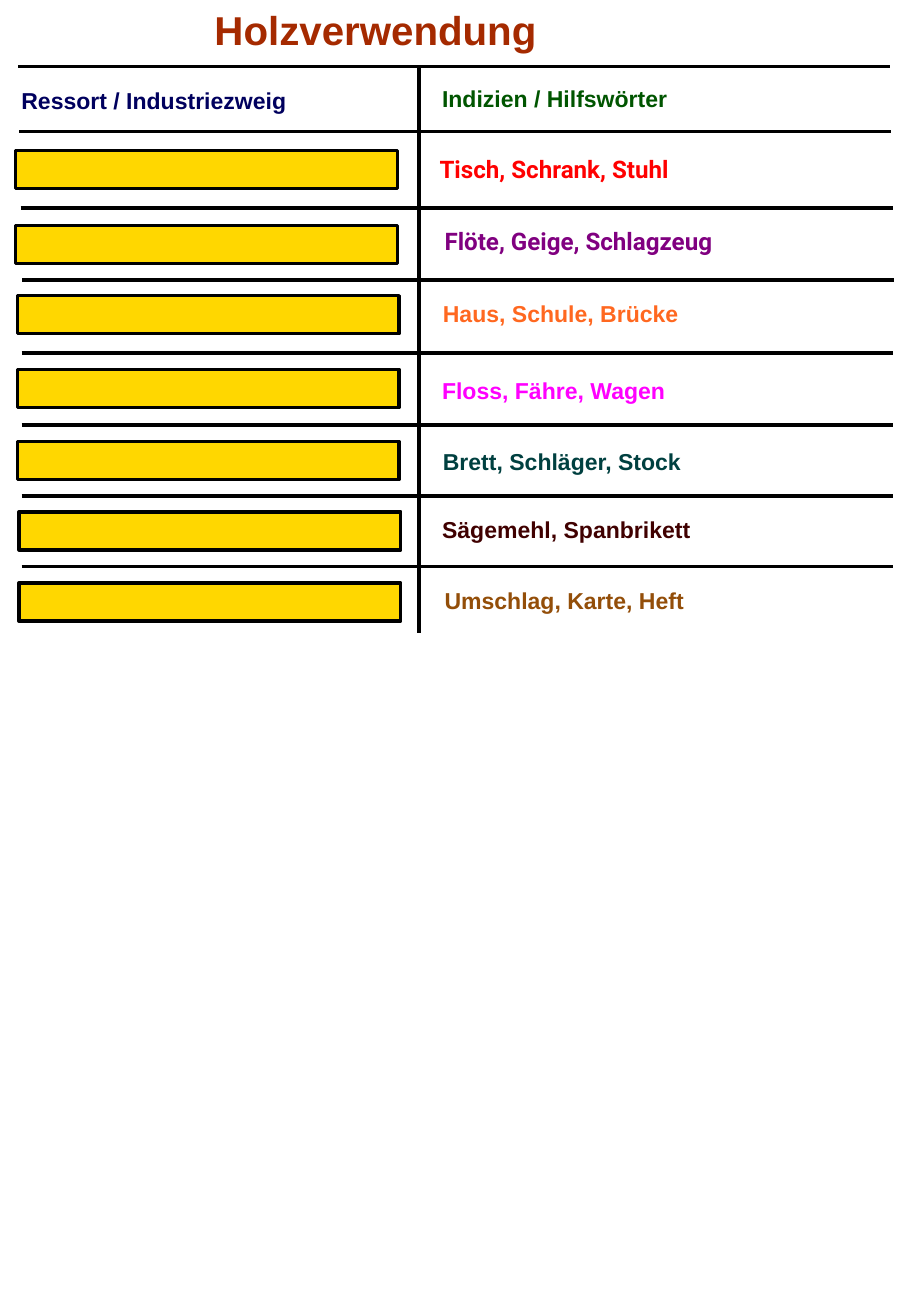
import dataclasses

import lxml.etree
import pptx
import pptx.dml.color
import pptx.enum.shapes
import pptx.enum.text
import pptx.oxml.ns
import pptx.util

WIDTH, HEIGHT = 11.11, 15.89
GRID_TOP, ROW_HEIGHT = 1.63, 0.87
HEADER_TOP, GRID_BOTTOM = 0.8, 7.64
RULE_LENGTH, DIVIDER_LEFT = 10.53, 5.06
SLOT_WIDTH, SLOT_HEIGHT = 4.61, 0.46
HINT_WIDTH, TEXT_HEIGHT = 5.1, 0.44

COLOURS = {
    "rust": "A52A00", "navy": "00005E", "green": "005500",
    "black": "000000", "gold": "FFD700", "red": "FF0000",
    "purple": "800080", "orange": "FF6820", "magenta": "FF00FF",
    "teal": "004040", "maroon": "400000", "brown": "934E09",
}


@dataclasses.dataclass
class Row:
    hint: str
    colour: str
    rule_left: float
    rule_drop: float
    slot_left: float
    slot_drop: float
    hint_left: float
    hint_drop: float
    font: str = "Arial"
    size: int = 20


ROWS = [
    Row("Tisch, Schrank, Stuhl", "red", 0.23, -0.04, 0.19, 0.19, 5.21, 0.19, "Roboto", 21),
    Row("Flöte, Geige, Schlagzeug", "purple", 0.25, 0.01, 0.19, 0.22, 5.27, 0.18, "Roboto", 21),
    Row("Haus, Schule, Brücke", "orange", 0.27, 0.01, 0.21, 0.2, 5.25, 0.2),
    Row("Floss, Fähre, Wagen", "magenta", 0.26, 0.02, 0.21, 0.22, 5.24, 0.26),
    Row("Brett, Schläger, Stock", "teal", 0.26, 0.02, 0.21, 0.22, 5.25, 0.24),
    Row("Sägemehl, Spanbrikett", "maroon", 0.26, 0.01, 0.23, 0.2, 5.24, 0.2),
    Row("Umschlag, Karte, Heft", "brown", 0.26, -0.01, 0.23, 0.19, 5.27, 0.18),
]


def inches(*lengths):
    return [pptx.util.Inches(length) for length in lengths]


def rgb(name):
    return pptx.dml.color.RGBColor.from_string(COLOURS[name])


def format_text(box, text, colour, font="Arial", size=20):
    frame = box.text_frame
    frame.text = text
    frame.word_wrap = True
    frame.auto_size = pptx.enum.text.MSO_AUTO_SIZE.NONE
    frame.vertical_anchor = pptx.enum.text.MSO_ANCHOR.TOP
    para = frame.paragraphs[0]
    para.alignment = pptx.enum.text.PP_ALIGN.LEFT
    span = para.runs[0]
    span.font.name = font
    span.font.size = pptx.util.Pt(size)
    span.font.bold = True
    span.font.color.rgb = rgb(colour)


def add_title(page):
    title = page.shapes.title
    title.left, title.top, title.width, title.height = inches(2.49, 0.01, 5.63, 0.69)
    format_text(title, "Holzverwendung", "rust", size=35)


def add_label(page, left, top, text, colour, font="Arial", size=20):
    box = page.shapes.add_textbox(*inches(left, top, HINT_WIDTH, TEXT_HEIGHT))
    format_text(box, text, colour, font, size)


def format_line(line):
    line.color.rgb = rgb("black")
    line.width = pptx.util.Pt(3)


def add_line(page, left, top, right, bottom):
    line = page.shapes.add_connector(
        pptx.enum.shapes.MSO_CONNECTOR.STRAIGHT, *inches(left, top, right, bottom))
    format_line(line.line)
    lxml.etree.SubElement(line._element.spPr, pptx.oxml.ns.qn("a:effectLst"))


def add_rule(page, left, top):
    add_line(page, left, top, left + RULE_LENGTH, top)


def add_slot(page, left, top):
    slot = page.shapes.add_shape(
        pptx.enum.shapes.MSO_SHAPE.RECTANGLE, *inches(left, top, SLOT_WIDTH, SLOT_HEIGHT))
    slot.shadow.inherit = False
    slot.fill.solid()
    slot.fill.fore_color.rgb = rgb("gold")
    format_line(slot.line)


def add_row(page, row, top):
    add_rule(page, row.rule_left, top + row.rule_drop)
    add_slot(page, row.slot_left, top + row.slot_drop)
    add_label(page, row.hint_left, top + row.hint_drop,
              row.hint, row.colour, row.font, row.size)


def main():
    deck = pptx.Presentation()
    deck.slide_width, deck.slide_height = inches(WIDTH, HEIGHT)
    page = deck.slides.add_slide(deck.slide_layouts.get_by_name("Title Only"))
    add_title(page)
    add_label(page, 0.16, 1, "Ressort / Industriezweig", "navy")
    add_label(page, 5.24, 0.97, "Indizien / Hilfswörter", "green")
    add_rule(page, 0.22, HEADER_TOP)
    for index, row in enumerate(ROWS):
        add_row(page, row, GRID_TOP + index * ROW_HEIGHT)
    add_line(page, DIVIDER_LEFT, HEADER_TOP, DIVIDER_LEFT, GRID_BOTTOM)
    deck.save("out.pptx")


if __name__ == "__main__":
    main()
